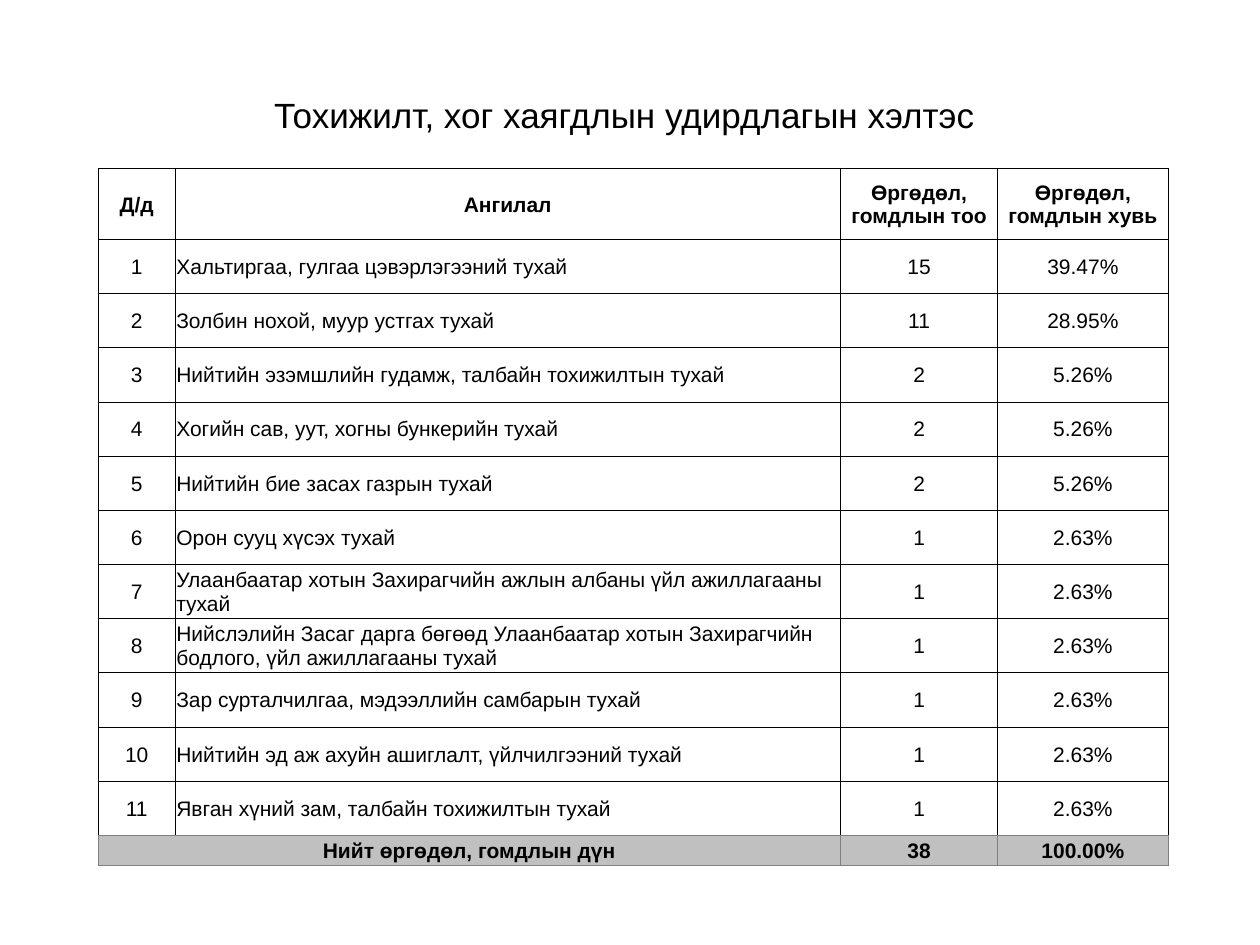
from lxml.etree import SubElement
from pptx import Presentation
from pptx.dml.color import RGBColor
from pptx.enum.text import MSO_ANCHOR, PP_ALIGN
from pptx.oxml.ns import qn
from pptx.util import Inches, Pt

COLORS = {"text": "000000", "line": "000000", "cell": "FFFFFF",
          "total": "C0C0C0", "total_line": "808080"}
HEADER = ("Д/д", "Ангилал", "Өргөдөл, гомдлын тоо", "Өргөдөл, гомдлын хувь")
CATEGORIES = [
    ("Хальтиргаа, гулгаа цэвэрлэгээний тухай", "15", "39.47%"),
    ("Золбин нохой, муур устгах тухай", "11", "28.95%"),
    ("Нийтийн эзэмшлийн гудамж, талбайн тохижилтын тухай", "2", "5.26%"),
    ("Хогийн сав, уут, хогны бункерийн тухай", "2", "5.26%"),
    ("Нийтийн бие засах газрын тухай", "2", "5.26%"),
    ("Орон сууц хүсэх тухай", "1", "2.63%"),
    ("Улаанбаатар хотын Захирагчийн ажлын албаны үйл ажиллагааны тухай", "1", "2.63%"),
    ("Нийслэлийн Засаг дарга бөгөөд Улаанбаатар хотын Захирагчийн бодлого, "
     "үйл ажиллагааны тухай", "1", "2.63%"),
    ("Зар сурталчилгаа, мэдээллийн самбарын тухай", "1", "2.63%"),
    ("Нийтийн эд аж ахуйн ашиглалт, үйлчилгээний тухай", "1", "2.63%"),
    ("Явган хүний зам, талбайн тохижилтын тухай", "1", "2.63%"),
]
TOTAL = ("Нийт өргөдөл, гомдлын дүн", "", "38", "100.00%")
COL_WIDTHS = (0.61, 5.28, 1.25, 1.35)
ROW_HEIGHTS = (0.56, *[0.43] * len(CATEGORIES), 0.24)


class SlideBuilder:
    """Holds the text style and the current slide, and adds elements to it."""

    def __init__(self, slide, font="Arial"):
        self.slide = slide
        self.font = font

    def style(self, p, size, bold=False, align=PP_ALIGN.CENTER):
        p.alignment = align
        p.font.name = self.font
        p.font.size = Pt(size)
        p.font.bold = bold
        p.font.color.rgb = RGBColor.from_string(COLORS["text"])

    def title(self, text, left, top, width, height):
        sp = self.slide.shapes.title
        sp.left, sp.top = Inches(left), Inches(top)
        sp.width, sp.height = Inches(width), Inches(height)
        tf = sp.text_frame
        tf.text = text
        tf.vertical_anchor = MSO_ANCHOR.MIDDLE
        p = tf.paragraphs[0]
        p.line_spacing = 0.9
        self.style(p, 20)

    def borders(self, cell, colors):
        tc_pr = cell._tc.get_or_add_tcPr()
        for side, color in zip("LRTB", colors):
            ln = SubElement(tc_pr, qn(f"a:ln{side}"), w=str(Pt(0.5)))
            fill = SubElement(ln, qn("a:solidFill"))
            SubElement(fill, qn("a:srgbClr"), val=COLORS[color])

    def cell(self, cell, text, fill, borders, bold, align):
        self.borders(cell, borders)
        cell.fill.solid()
        cell.fill.fore_color.rgb = RGBColor.from_string(COLORS[fill])
        cell.margin_left = cell.margin_right = cell.margin_top = Inches(0.01)
        cell.margin_bottom = 0
        cell.vertical_anchor = MSO_ANCHOR.MIDDLE
        cell.text = text
        self.style(cell.text_frame.paragraphs[0], 12, bold, align)

    def table(self, rows, left, top):
        table = self.slide.shapes.add_table(
            len(rows), len(COL_WIDTHS), Inches(left), Inches(top),
            Inches(sum(COL_WIDTHS)), Inches(sum(ROW_HEIGHTS))).table
        table.first_row = table.horz_banding = False
        for col, width in zip(table.columns, COL_WIDTHS):
            col.width = Inches(width)
        for row, height in zip(table.rows, ROW_HEIGHTS):
            row.height = Inches(height)
        last = len(rows) - 1
        table.cell(last, 0).merge(table.cell(last, 1))
        for i, values in enumerate(rows):
            fill = "total" if i == last else "cell"
            line = "total_line" if i == last else "line"
            bottom = "total_line" if i >= last - 1 else "line"
            is_body = 0 < i < last
            for j, text in enumerate(values):
                align = PP_ALIGN.LEFT if is_body and j == 1 else PP_ALIGN.CENTER
                self.cell(table.cell(i, j), text, fill,
                          (line, line, line, bottom), not is_body, align)


def main():
    prs = Presentation()
    prs.slide_width, prs.slide_height = Inches(10), Inches(7.5)
    s = SlideBuilder(prs.slides.add_slide(prs.slide_layouts[5]))
    s.title("Тохижилт, хог хаягдлын удирдлагын хэлтэс", 0.89, 0.73, 8.13, 0.4)
    body = [(str(n), *values) for n, values in enumerate(CATEGORIES, 1)]
    s.table([HEADER, *body, TOTAL], 0.78, 1.34)
    prs.save("out.pptx")


if __name__ == "__main__":
    main()
